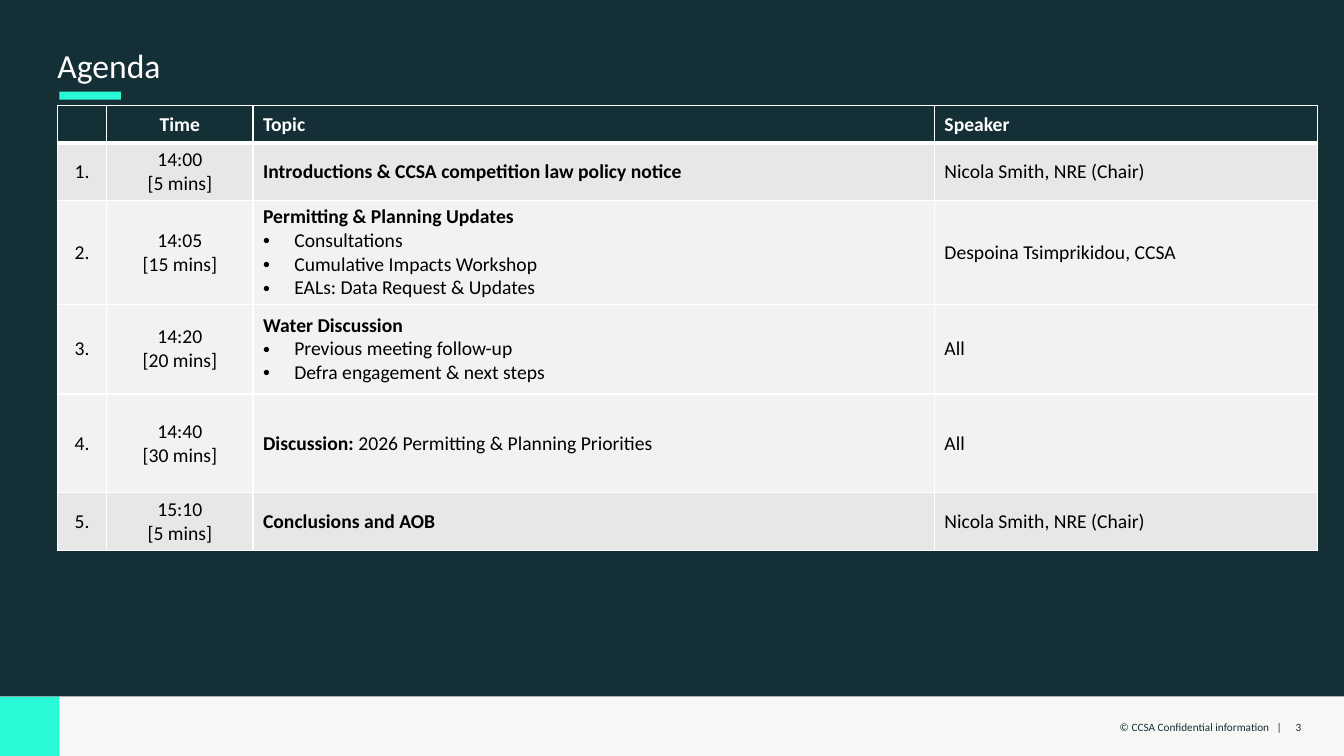
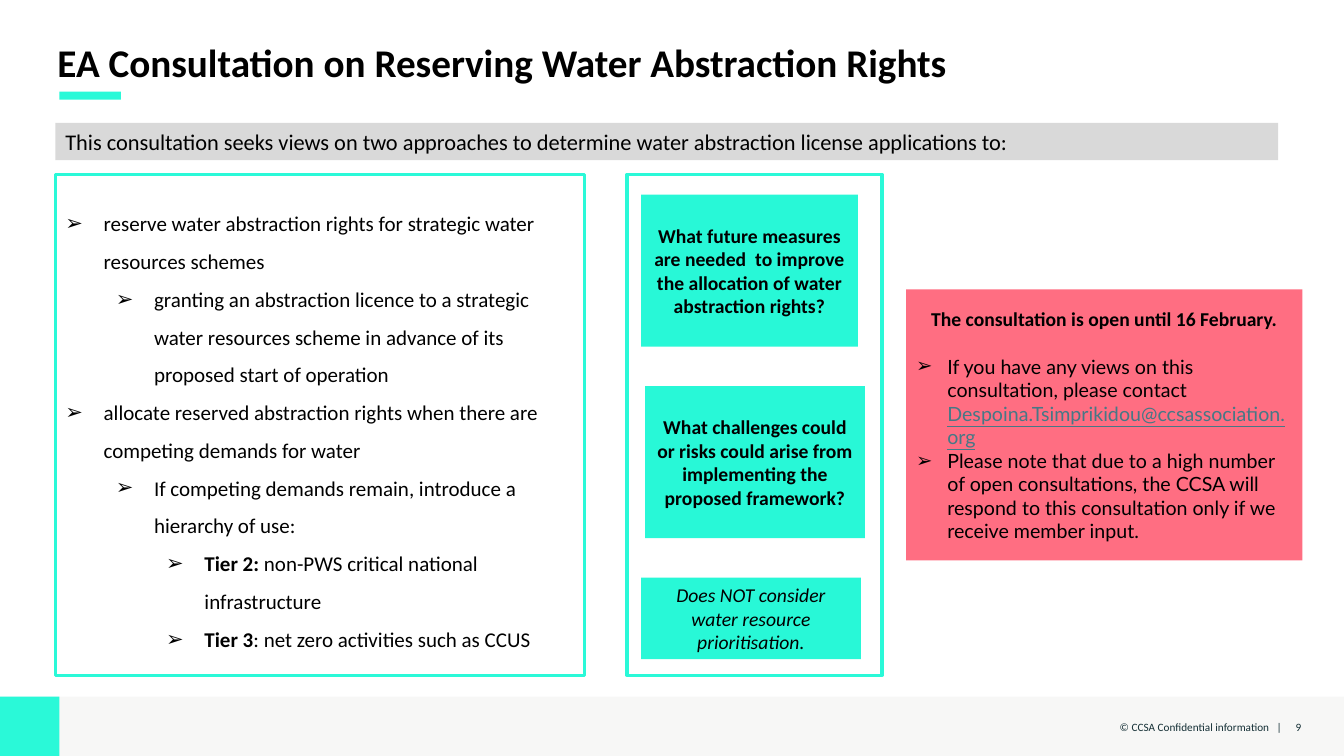
import dataclasses
import lxml.etree
import pptx
import pptx.dml.color
import pptx.enum.shapes
import pptx.enum.text
import pptx.oxml.ns
import pptx.util

qn = pptx.oxml.ns.qn
ALIGN = pptx.enum.text.PP_ALIGN
ANCHOR = pptx.enum.text.MSO_ANCHOR
GRID_UNIT = 0.1


@dataclasses.dataclass(frozen=True)
class Theme:
    dark: str = "142F35"
    teal: str = "2AF9D8"
    card: str = "28F8D7"
    pink: str = "FF6E82"
    band: str = "D9D9D9"
    footer: str = "E0E1DD"
    row_strong: str = "E7E7E7"
    row_soft: str = "F2F2F2"
    white: str = "FFFFFF"
    black: str = "000000"
    link: str = "467886"
    font: str = "Calibri"
    contact_font: str = "Lato"
    agenda_title: float = 24
    topic_title: float = 28
    title_spacing: float = 50.6
    lead: float = 16
    bullets: float = 15
    body: float = 14
    small: float = 8
    frame_line: float = 2.25


THEME = Theme()


@dataclasses.dataclass(frozen=True)
class Box:
    column: float
    row: float
    columns: float
    rows: float

    def inside(self, column, row, columns, rows):
        return Box(self.column + column, self.row + row, columns, rows)

    def lengths(self):
        return [length(value) for value in dataclasses.astuple(self)]


@dataclasses.dataclass(frozen=True)
class Run:
    text: str
    bold: bool = False
    italic: bool = False
    underline: bool = False
    color: str = THEME.black
    size: float = THEME.body
    font: str = THEME.font


@dataclasses.dataclass(frozen=True)
class Line:
    runs: tuple
    align: object = ALIGN.LEFT
    bullet: str = ""
    level: int = 0
    hang: float = 3.1
    spacing: object = None
    after: float = 0


SLIDE = Box(0, 0, 133.33, 75)
FOOTER = SLIDE.inside(0, 69.1, 133.33, 5.9)
HEADING = SLIDE.inside(5.7, 1.4, 119.7, 8.5)


def length(units):
    return pptx.util.Inches(units * GRID_UNIT)


def rgb(color):
    return pptx.dml.color.RGBColor.from_string(color)


def line_of(text, align=ALIGN.LEFT, **style):
    return Line((Run(text, **style),), align)


def write(frame, lines):
    for index, line in enumerate(lines):
        paragraph = frame.add_paragraph() if index else frame.paragraphs[0]
        paragraph.alignment = line.align
        paragraph.level = line.level
        if line.bullet:
            properties = paragraph._p.get_or_add_pPr()
            properties.set("marL", str(length(line.level * 5 + line.hang)))
            properties.set("indent", str(-length(line.hang)))
            lxml.etree.SubElement(properties, qn("a:buFont")).set("typeface", "Arial")
            lxml.etree.SubElement(properties, qn("a:buChar")).set("char", line.bullet)
        if line.spacing:
            paragraph.line_spacing = line.spacing
        if line.after:
            paragraph.space_after = pptx.util.Pt(line.after)
        for item in line.runs:
            run = paragraph.add_run()
            run.text = item.text
            run.font.name = item.font
            run.font.size = pptx.util.Pt(item.size)
            run.font.bold = item.bold
            run.font.italic = item.italic
            run.font.underline = item.underline
            run.font.color.rgb = rgb(item.color)


def add_rectangle(slide, box, fill=None, outline=None, lines=(), anchor=ANCHOR.MIDDLE):
    shape = slide.shapes.add_shape(
        pptx.enum.shapes.MSO_SHAPE.RECTANGLE, *box.lengths())
    shape.shadow.inherit = False
    if fill:
        shape.fill.solid()
        shape.fill.fore_color.rgb = rgb(fill)
    else:
        shape.fill.background()
    if outline:
        shape.line.color.rgb = rgb(outline)
        shape.line.width = pptx.util.Pt(THEME.frame_line)
    else:
        shape.line.fill.background()
    shape.text_frame.word_wrap = True
    shape.text_frame.vertical_anchor = anchor
    write(shape.text_frame, lines)
    return shape


def add_text(slide, box, lines, margins=(1, 0.5, 1, 0.5)):
    frame = slide.shapes.add_textbox(*box.lengths()).text_frame
    frame.word_wrap = True
    frame.margin_left, frame.margin_top, frame.margin_right, frame.margin_bottom = map(
        length, margins)
    write(frame, lines)


def add_footer(slide, box, number):
    strip = add_rectangle(slide, box, THEME.footer)
    color = strip.element.spPr.find(".//" + qn("a:srgbClr"))
    lxml.etree.SubElement(color, qn("a:alpha")).set("val", "25000")
    add_rectangle(slide, box.inside(0, 0, box.rows, box.rows), THEME.teal)
    style = {"align": ALIGN.RIGHT, "size": THEME.small, "color": THEME.dark}
    add_text(slide, box.inside(126.1, 1.9, 3, 1.5),
             [line_of(number, **style)], (1, 0.5, 0, 0.5))
    add_text(slide, box.inside(75.6, 1.9, 52.6, 2.6),
             [line_of("© CCSA Confidential information   |", **style)])


def add_heading(slide, box, title):
    add_text(slide, box.inside(0, 0, box.columns, 6.2),
             [Line((title,), spacing=pptx.util.Pt(THEME.title_spacing))], (0, 0, 0, 0))
    add_rectangle(slide, box.inside(0.2, 7.7, 6.1, 0.8), THEME.teal)


def set_borders(cell, widths):
    properties = cell._tc.get_or_add_tcPr()
    for side, width in widths.items():
        border = lxml.etree.SubElement(properties, qn("a:ln" + side))
        border.set("w", str(pptx.util.Pt(width)))
        fill = lxml.etree.SubElement(border, qn("a:solidFill"))
        lxml.etree.SubElement(fill, qn("a:srgbClr")).set("val", THEME.white)


def agenda_rows():
    heads = [("", ALIGN.CENTER), ("Time", ALIGN.CENTER),
             ("Topic", ALIGN.LEFT), ("Speaker", ALIGN.LEFT)]
    yield [[line_of(text, align, bold=True, color=THEME.white)] if text else []
           for text, align in heads]
    sessions = [
        ("14:00", "[5 mins]", "Introductions & CCSA competition law policy notice",
         "", [], "Nicola Smith, NRE (Chair)"),
        ("14:05", "[15 mins]", "Permitting & Planning Updates", "",
         ["Consultations", "Cumulative Impacts Workshop",
          "EALs: Data Request & Updates"], "Despoina Tsimprikidou, CCSA"),
        ("14:20", "[20 mins]", "Water Discussion", "",
         ["Previous meeting follow-up", "Defra engagement & next steps"], "All"),
        ("14:40", "[30 mins]", "Discussion: ",
         "2026 Permitting & Planning Priorities", [], "All"),
        ("15:10", "[5 mins]", "Conclusions and AOB", "", [],
         "Nicola Smith, NRE (Chair)"),
    ]
    for number, (start, duration, topic, detail, points, speaker) in enumerate(sessions, 1):
        topic_runs = (Run(topic, bold=True),) + ((Run(detail),) if detail else ())
        yield [
            [line_of(f"{number}.", ALIGN.CENTER)],
            [line_of(text, ALIGN.CENTER) for text in (start, duration)],
            [Line(topic_runs)] + [Line((Run(point),), bullet="•") for point in points],
            [line_of(speaker)],
        ]


def add_agenda_table(slide, box):
    widths = [4.9, 14.5, 67.6, 38]
    heights = [3.7, 5.7, 10.3, 8.9, 9.8, 5.7]
    fills = [THEME.dark, THEME.row_strong] + [THEME.row_soft] * 3 + [THEME.row_strong]
    table = slide.shapes.add_table(len(heights), len(widths), *box.lengths()).table
    table.horz_banding = False
    for column, width in zip(table.columns, widths):
        column.width = length(width)
    for index, (row, height, contents) in enumerate(
            zip(table.rows, heights, agenda_rows())):
        row.height = length(height)
        for cell, lines in zip(row.cells, contents):
            set_borders(cell, {"L": 1, "R": 1, "T": 3 if index == 1 else 1,
                               "B": 3 if index == 0 else 1})
            cell.fill.solid()
            cell.fill.fore_color.rgb = rgb(fills[index])
            cell.vertical_anchor = ANCHOR.MIDDLE
            cell.margin_top = cell.margin_bottom = length(0.3)
            write(cell.text_frame, lines)


def add_approaches(slide, box):
    points = [
        (0, "", "reserve water abstraction rights for strategic water resources schemes"),
        (1, "", "granting an abstraction licence to a strategic water resources scheme "
                "in advance of its proposed start of operation"),
        (0, "", "allocate reserved abstraction rights when there are competing demands "
                "for water"),
        (1, "", "If competing demands remain, introduce a hierarchy of use:"),
        (2, "Tier 2:", " non-PWS critical national infrastructure"),
        (2, "Tier 3", ": net zero activities such as CCUS"),
    ]
    lines = []
    for level, label, text in points:
        label_runs = (Run(label, bold=True, size=THEME.bullets),) if label else ()
        lines.append(Line(label_runs + (Run(text, size=THEME.bullets),), bullet="➢",
                          level=level, hang=3.8, spacing=1.5))
    add_rectangle(slide, box, outline=THEME.teal, lines=lines)


def add_questions(slide, box):
    cards = [
        (1.4, 21.5, 15.1, {"bold": True}, "What future measures are needed  to improve "
         "the allocation of water abstraction rights?"),
        (1.8, 21.8, 15.1, {"bold": True}, "What challenges could or risks could arise "
         "from implementing the proposed framework?"),
        (1.4, 21.8, 8.1, {"italic": True},
         "Does NOT consider water resource prioritisation."),
    ]
    add_rectangle(slide, box, outline=THEME.teal)
    top, gap = 2, 3.9
    for left, width, height, style, text in cards:
        add_rectangle(slide, box.inside(left, top, width, height), THEME.card,
                      lines=[line_of(text, ALIGN.CENTER, **style)])
        top += height + gap


def add_deadline(slide, box):
    font = THEME.contact_font
    lines = [
        Line((Run("The consultation is open until 16 February.", bold=True),),
             ALIGN.CENTER, after=17),
        Line((Run("If you have any views on this consultation, please contact ", font=font),
              Run("Despoina.Tsimprikidou@ccsassociation.org", underline=True,
                  color=THEME.link, font=font)), bullet="➢"),
        Line((Run("Please note that due to a high number of open consultations, the CCSA "
                  "will respond to this consultation only if we receive member input.",
                  font=font),), bullet="➢"),
    ]
    add_rectangle(slide, box, THEME.pink, lines=lines)


def build_agenda(slide, box):
    add_footer(slide, FOOTER, "3")
    add_rectangle(slide, box.inside(0, 0, box.columns, FOOTER.row), THEME.dark)
    add_heading(slide, HEADING, Run("Agenda", size=THEME.agenda_title, color=THEME.white))
    add_agenda_table(slide, box.inside(5.7, 10.5, 125, 44.1))


def build_consultation(slide, box):
    add_footer(slide, FOOTER, "9")
    add_heading(slide, HEADING, Run("EA Consultation on Reserving Water Abstraction Rights",
                                    bold=True, size=THEME.topic_title))
    add_rectangle(slide, box.inside(5.5, 12.2, 121.3, 3.7), THEME.band, anchor=ANCHOR.TOP,
                  lines=[line_of("This consultation seeks views on two approaches to "
                                 "determine water abstraction license applications to:",
                                 size=THEME.lead)])
    add_approaches(slide, box.inside(5.5, 17.3, 52.5, 49.7))
    add_questions(slide, box.inside(62.2, 17.3, 25.3, 49.7))
    add_deadline(slide, box.inside(89.9, 28.7, 39.3, 26.9))


def main():
    presentation = pptx.Presentation()
    presentation.slide_width = length(SLIDE.columns)
    presentation.slide_height = length(SLIDE.rows)
    for build in (build_agenda, build_consultation):
        build(presentation.slides.add_slide(presentation.slide_layouts[6]), SLIDE)
    presentation.save("out.pptx")


if __name__ == "__main__":
    main()
